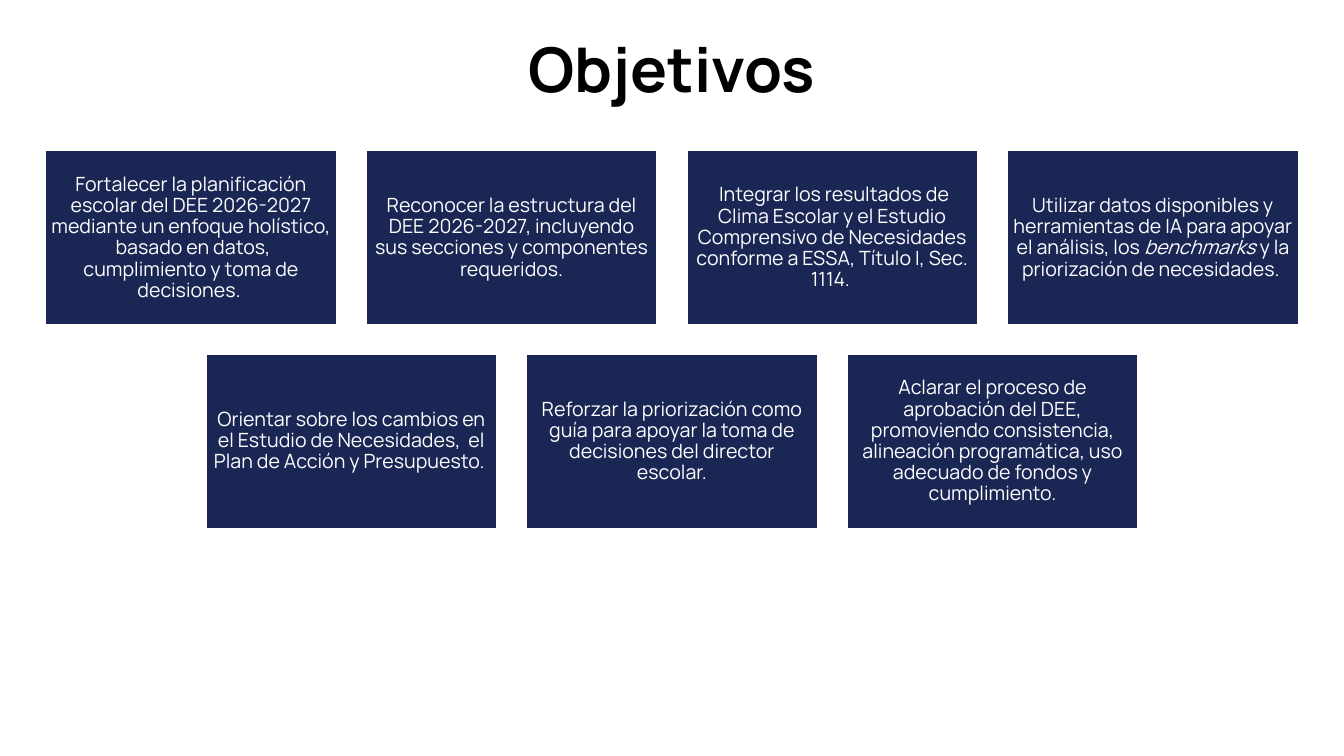
"""Build the "Objetivos" slide: a title over two centred rows of goal cards."""
from pptx import Presentation
from pptx.dml.color import RGBColor
from pptx.enum.shapes import MSO_SHAPE as Shape
from pptx.enum.text import MSO_ANCHOR as Anchor, PP_ALIGN as Align
from pptx.util import Inches, Pt

TITLE = "Objetivos"
GOAL_ROWS = [
    [
        ["Fortalecer la planificación escolar del DEE 2026-2027 mediante un enfoque "
         "holístico,  basado en datos, cumplimiento y toma de decisiones. "],
        ["Reconocer la estructura del DEE 2026-2027, incluyendo sus secciones y "
         "componentes requeridos."],
        [" Integrar los resultados de Clima Escolar y el Estudio Comprensivo de "
         "Necesidades conforme a ESSA, Título I, Sec. 1114. "],
        ["Utilizar datos disponibles y herramientas de IA para apoyar el análisis, los ",
         "benchmarks",
         " y la priorización de necesidades. "],
    ],
    [
        ["Orientar sobre los cambios en el Estudio de Necesidades,  el Plan de Acción "
         "y Presupuesto. "],
        ["Reforzar la priorización como guía para apoyar la toma de decisiones del "
         "director escolar."],
        ["Aclarar el proceso de aprobación del DEE, promoviendo consistencia, "
         "alineación programática, uso adecuado de fondos y cumplimiento."],
    ],
]
ITALIC_TERMS = {"benchmarks"}

NAVY, WHITE, BLACK = (RGBColor.from_string(code) for code in ("1A2754", "FFFFFF", "000000"))
THEME = {
    "card": NAVY,
    "border": WHITE,
    "border_width": Pt(1.5),
    "title_font": {"name": "Manrope", "size": Pt(44), "bold": True},
    "title_color": BLACK,
    "goal_font": {"name": "Manrope", "size": Pt(14), "bold": False},
    "goal_color": WHITE,
}

SLIDE_W, SLIDE_H = 13.33, 7.5
TITLE_TOP, TITLE_H = 0.15, 1.14
CARD_W, CARD_H, GAP = 2.89, 1.74, 0.29
CARDS_TOP, ROW_STEP = 1.49, 2.02
CARD_INSET = Inches(0.06)
CARD_FRAME = {f"margin_{side}": CARD_INSET for side in ("left", "top", "right", "bottom")}


def apply(target, settings):
    for name, value in settings.items():
        setattr(target, name, value)


def write(frame, pieces, font, color, frame_format):
    apply(frame, {"word_wrap": True, "vertical_anchor": Anchor.MIDDLE, **frame_format})
    paragraph = frame.paragraphs[0]
    apply(paragraph, {"alignment": Align.CENTER, "line_spacing": 0.9})
    for piece in pieces:
        run = paragraph.add_run()
        run.text = piece
        apply(run.font, {**font, "italic": piece in ITALIC_TERMS})
        run.font.color.rgb = color


def add_goal(slide, left, top, pieces):
    card = slide.shapes.add_shape(
        Shape.RECTANGLE, Inches(left), Inches(top), Inches(CARD_W), Inches(CARD_H))
    card.shadow.inherit = False
    card.fill.solid()
    card.fill.fore_color.rgb = THEME["card"]
    card.line.color.rgb = THEME["border"]
    card.line.width = THEME["border_width"]
    write(card.text_frame, pieces, THEME["goal_font"], THEME["goal_color"], CARD_FRAME)


def main():
    deck = Presentation()
    apply(deck, {"slide_width": Inches(SLIDE_W), "slide_height": Inches(SLIDE_H)})
    slide = deck.slides.add_slide(deck.slide_layouts[6])

    heading = slide.shapes.add_textbox(0, Inches(TITLE_TOP), Inches(SLIDE_W), Inches(TITLE_H))
    write(heading.text_frame, [TITLE], THEME["title_font"], THEME["title_color"], {})

    for row, goals in enumerate(GOAL_ROWS):
        row_width = len(goals) * (CARD_W + GAP) - GAP
        row_left = (SLIDE_W - row_width) / 2
        for column, pieces in enumerate(goals):
            add_goal(slide, row_left + column * (CARD_W + GAP), CARDS_TOP + row * ROW_STEP, pieces)

    deck.save("out.pptx")


if __name__ == "__main__":
    main()
